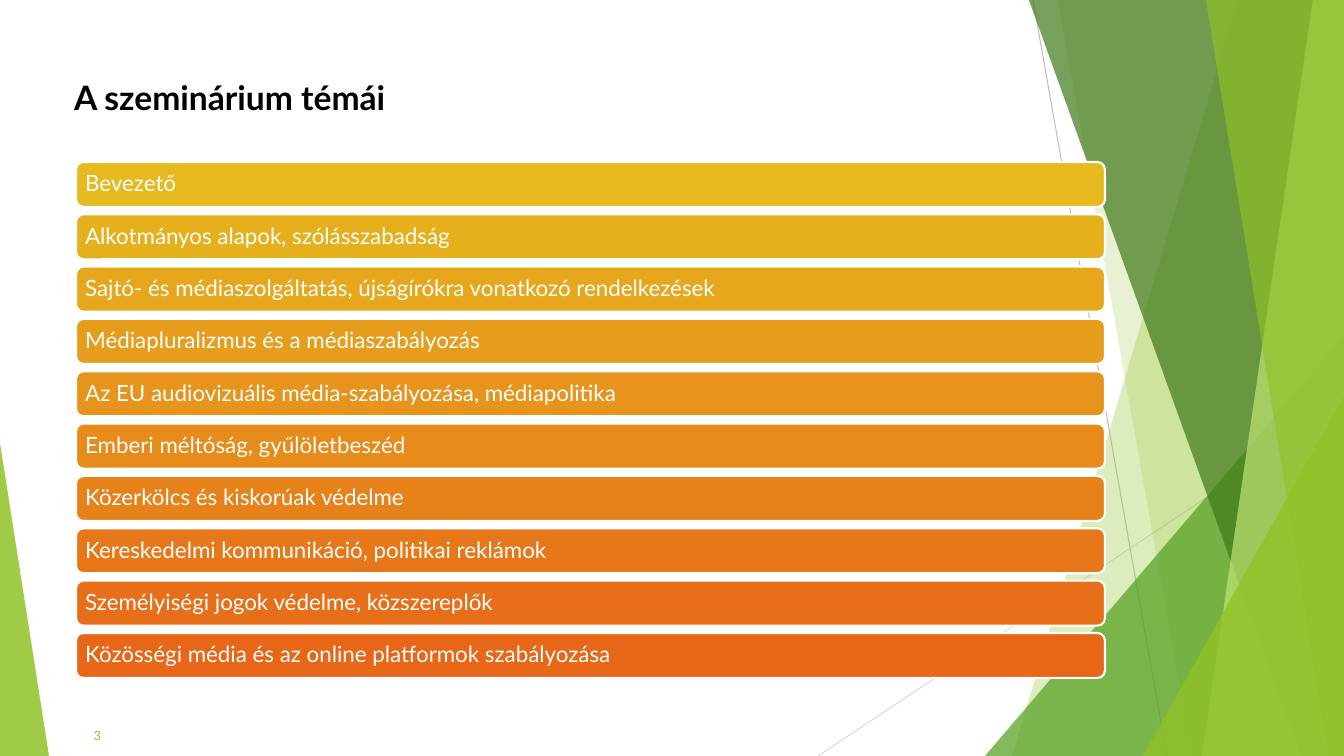
from dataclasses import dataclass

from lxml.etree import SubElement
from pptx import Presentation
from pptx.dml.color import RGBColor
from pptx.enum.shapes import MSO_CONNECTOR, MSO_SHAPE
from pptx.enum.text import MSO_ANCHOR, MSO_AUTO_SIZE, PP_ALIGN
from pptx.oxml.ns import qn
from pptx.util import Pt

TITLE = "A szeminárium témái"
PAGE_NUMBER = "3"
TOPICS = [
    "Bevezető",
    "Alkotmányos alapok, szólásszabadság",
    "Sajtó- és médiaszolgáltatás, újságírókra vonatkozó rendelkezések",
    "Médiapluralizmus és a médiaszabályozás",
    "Az EU audiovizuális média-szabályozása, médiapolitika",
    "Emberi méltóság, gyűlöletbeszéd",
    "Közerkölcs és kiskorúak védelme",
    "Kereskedelmi kommunikáció, politikai reklámok",
    "Személyiségi jogok védelme, közszereplők",
    "Közösségi média és az online platformok szabályozása",
]


@dataclass(frozen=True)
class Theme:
    font: str = "Lato"
    title_size: int = 24
    topic_size: int = 16
    number_size: int = 9
    black: str = "000000"
    white: str = "FFFFFF"
    green: str = "90C226"
    mid_green: str = "54A021"
    dark_green: str = "3F7819"
    pale_green: str = "C0E474"
    first_bar: str = "E6B91E"
    last_bar: str = "E76618"


THEME = Theme()
EMU_PER_PX = 914400 / 100.8
SLIDE_WIDTH, SLIDE_HEIGHT = 1344, 756

# from x, from y, to x, to y, colour
RAYS = [
    (1033, 0, 1167, 756, "BFBFBF"),
    (1344, 406, 818, 756, "D9D9D9"),
]
# Bands run to the right slide edge: (top x, bottom x).
# Triangles: (left, top, width, height, apex position).
FACETS = [
    ((1238, 1012), THEME.green, 30),
    ((1058, 1192), THEME.green, 20),
    ((985, 336, 359, 420, 1), THEME.mid_green, 72),
    ((1029, 1301), THEME.dark_green, 70),
    ((1313, 1202), THEME.pale_green, 70),
    ((1206, 1329), THEME.green, 65),
    ((1143, 396, 201, 360, 1), THEME.green, 80),
    ((0, 443, 49, 313, 0), THEME.green, 85),
]
TITLE_BOX = (64, 60, 1217, 80)
NUMBER_BOX = (64, 721, 47, 28)
BAR_LEFT, BAR_WIDTH, BAR_HEIGHT = 76, 1029, 45
FIRST_BAR_TOP, LAST_BAR_TOP = 162, 633
BAR_INSET = 7


def px(length):
    return round(length * EMU_PER_PX)


def rgb(color):
    return RGBColor.from_string(color)


def blend(start, end, share):
    pairs = zip(rgb(start), rgb(end))
    return RGBColor(*(round(a + (b - a) * share) for a, b in pairs))


def format_text(text_frame, size, color, align=PP_ALIGN.LEFT, bold=False):
    text_frame.word_wrap = True
    text_frame.auto_size = MSO_AUTO_SIZE.NONE
    text_frame.vertical_anchor = MSO_ANCHOR.MIDDLE
    paragraph = text_frame.paragraphs[0]
    paragraph.alignment = align
    for run in paragraph.runs:
        run.font.name = THEME.font
        run.font.size = Pt(size)
        run.font.bold = bold
        run.font.color.rgb = rgb(color)
    return paragraph


def add_ray(slide, from_x, from_y, to_x, to_y, color):
    ray = slide.shapes.add_connector(
        MSO_CONNECTOR.STRAIGHT, px(from_x), px(from_y), px(to_x), px(to_y))
    ray.line.color.rgb = rgb(color)
    ray.line.width = Pt(0.75)
    SubElement(ray._element.spPr, qn("a:effectLst"))


def add_facet(slide, outline, color, opacity):
    if len(outline) == 2:
        top_x, bottom_x = outline
        builder = slide.shapes.build_freeform(top_x, 0, scale=EMU_PER_PX)
        builder.add_line_segments([
            (SLIDE_WIDTH, 0), (SLIDE_WIDTH, SLIDE_HEIGHT), (bottom_x, SLIDE_HEIGHT)])
        facet = builder.convert_to_shape()
    else:
        *box, apex = outline
        facet = slide.shapes.add_shape(MSO_SHAPE.ISOSCELES_TRIANGLE, *map(px, box))
        facet.adjustments[0] = apex
    facet.shadow.inherit = False
    facet.line.fill.background()
    facet.fill.solid()
    facet.fill.fore_color.rgb = rgb(color)
    color_element = facet._element.spPr.find(qn("a:solidFill"))[0]
    SubElement(color_element, qn("a:alpha"), val=str(opacity * 1000))


def add_title(slide):
    title = slide.shapes.title
    title.left, title.top, title.width, title.height = map(px, TITLE_BOX)
    title.text_frame.text = TITLE
    paragraph = format_text(title.text_frame, THEME.title_size, THEME.black, bold=True)
    paragraph.line_spacing = Pt(THEME.title_size)


def add_page_number(slide):
    number = slide.shapes.add_textbox(*map(px, NUMBER_BOX))
    number.text_frame.text = PAGE_NUMBER
    format_text(number.text_frame, THEME.number_size, THEME.green, PP_ALIGN.RIGHT)


def add_topic_bar(slide, topic, share):
    """Place a bar by its share of the way from the first bar to the last."""
    top = FIRST_BAR_TOP + (LAST_BAR_TOP - FIRST_BAR_TOP) * share
    bar = slide.shapes.add_shape(
        MSO_SHAPE.ROUNDED_RECTANGLE,
        px(BAR_LEFT), px(top), px(BAR_WIDTH), px(BAR_HEIGHT))
    bar.shadow.inherit = False
    bar.fill.solid()
    bar.fill.fore_color.rgb = blend(THEME.first_bar, THEME.last_bar, share)
    bar.line.color.rgb = rgb(THEME.white)
    bar.line.width = Pt(1.5)
    frame = bar.text_frame
    frame.text = topic
    frame.margin_left = frame.margin_right = px(BAR_INSET)
    frame.margin_top = frame.margin_bottom = px(BAR_INSET)
    format_text(frame, THEME.topic_size, THEME.white).line_spacing = 0.9


def main():
    presentation = Presentation()
    presentation.slide_width = px(SLIDE_WIDTH)
    presentation.slide_height = px(SLIDE_HEIGHT)
    slide = presentation.slides.add_slide(presentation.slide_layouts[5])
    for ray in RAYS:
        add_ray(slide, *ray)
    for facet in FACETS:
        add_facet(slide, *facet)
    add_title(slide)
    add_page_number(slide)
    for index, topic in enumerate(TOPICS):
        add_topic_bar(slide, topic, index / (len(TOPICS) - 1))
    presentation.save("out.pptx")


if __name__ == "__main__":
    main()
